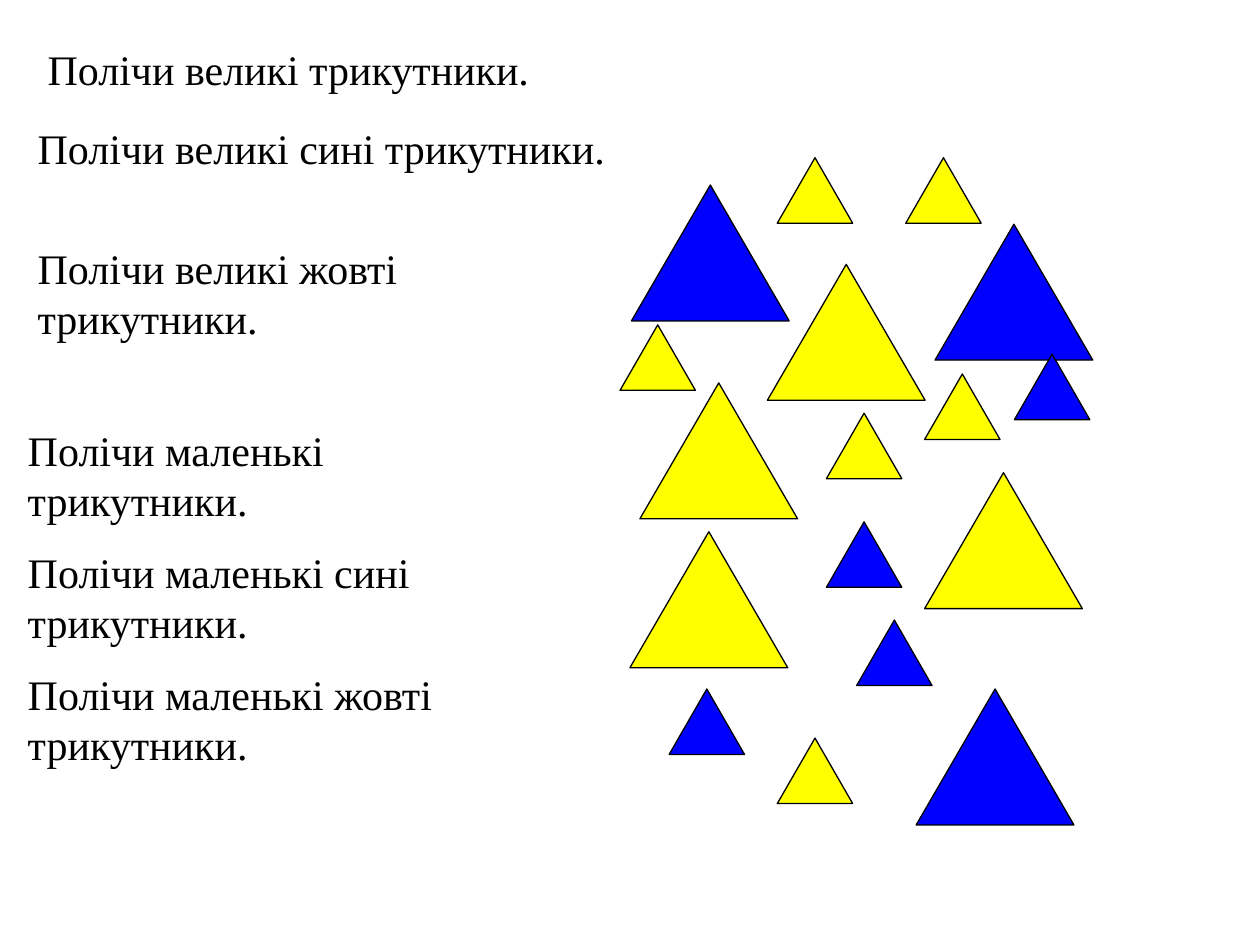
import pptx
import pptx.util
import pptx.dml.color
import pptx.enum.shapes
import pptx.enum.text

Cm = pptx.util.Cm
COLORS = {"blue": "0000FF", "yellow": "FFFF00", "black": "000000"}
FONT = "Times New Roman"

TASKS = [
    ((0.71, 0.74, 11.99, 1.27), (0.25, 0.13), ["Полічи великі трикутники."]),
    ((0.51, 2.34, 12.6, 2.06), (0.25, 0.13), ["Полічи великі сині трикутники."]),
    ((0.51, 4.75, 11.99, 3.07), (0.25, 0.13), ["Полічи великі жовті трикутники."]),
    ((0.41, 8.31, 10.31, 9.47), (0.15, 0.25), [
        "Полічи маленькі трикутники.",
        "Полічи маленькі сині трикутники.",
        "Полічи маленькі жовті трикутники.",
    ]),
]

SIZES = {"big": (3.18, 2.74), "small": (1.52, 1.32)}
TRIANGLES = {
    ("big", "blue"): [(12.73, 3.73), (18.85, 4.52), (18.47, 13.89)],
    ("big", "yellow"): [(15.47, 5.33), (12.9, 7.72), (12.7, 10.72), (18.64, 9.53)],
    ("small", "yellow"): [
        (18.26, 3.18), (15.67, 3.18), (12.5, 6.55),
        (16.66, 8.33), (15.67, 14.88), (18.64, 7.54),
    ],
    ("small", "blue"): [(13.49, 13.89), (20.45, 7.14), (17.27, 12.5), (16.66, 10.52)],
}


def rgb(name):
    return pptx.dml.color.RGBColor.from_string(COLORS[name])


def add_task(slide, place, insets, sentences):
    frame = slide.shapes.add_textbox(*map(Cm, place)).text_frame
    frame.word_wrap = True
    frame.vertical_anchor = pptx.enum.text.MSO_ANCHOR.TOP
    frame.margin_left, frame.margin_top = map(Cm, insets)
    frame.text = "\n".join(sentences)
    for paragraph in frame.paragraphs:
        if len(sentences) > 1:
            paragraph.space_after = pptx.util.Pt(12)
        for run in paragraph.runs:
            run.font.name = FONT
            run.font.size = pptx.util.Pt(24)
            run.font.color.rgb = rgb("black")


def add_triangle(slide, corner, size, color):
    triangle = slide.shapes.add_shape(
        pptx.enum.shapes.MSO_SHAPE.ISOSCELES_TRIANGLE, *map(Cm, corner + SIZES[size]))
    triangle.shadow.inherit = False
    triangle.fill.solid()
    triangle.fill.fore_color.rgb = rgb(color)
    triangle.line.color.rgb = rgb("black")
    triangle.line.width = pptx.util.Pt(0.75)


def main():
    deck = pptx.Presentation()
    deck.slide_width, deck.slide_height = Cm(25.4), Cm(19.05)
    slide = deck.slides.add_slide(deck.slide_layouts[6])
    for (size, color), corners in TRIANGLES.items():
        for corner in corners:
            add_triangle(slide, corner, size, color)
    for place, insets, sentences in TASKS:
        add_task(slide, place, insets, sentences)
    deck.save("out.pptx")


if __name__ == "__main__":
    main()
